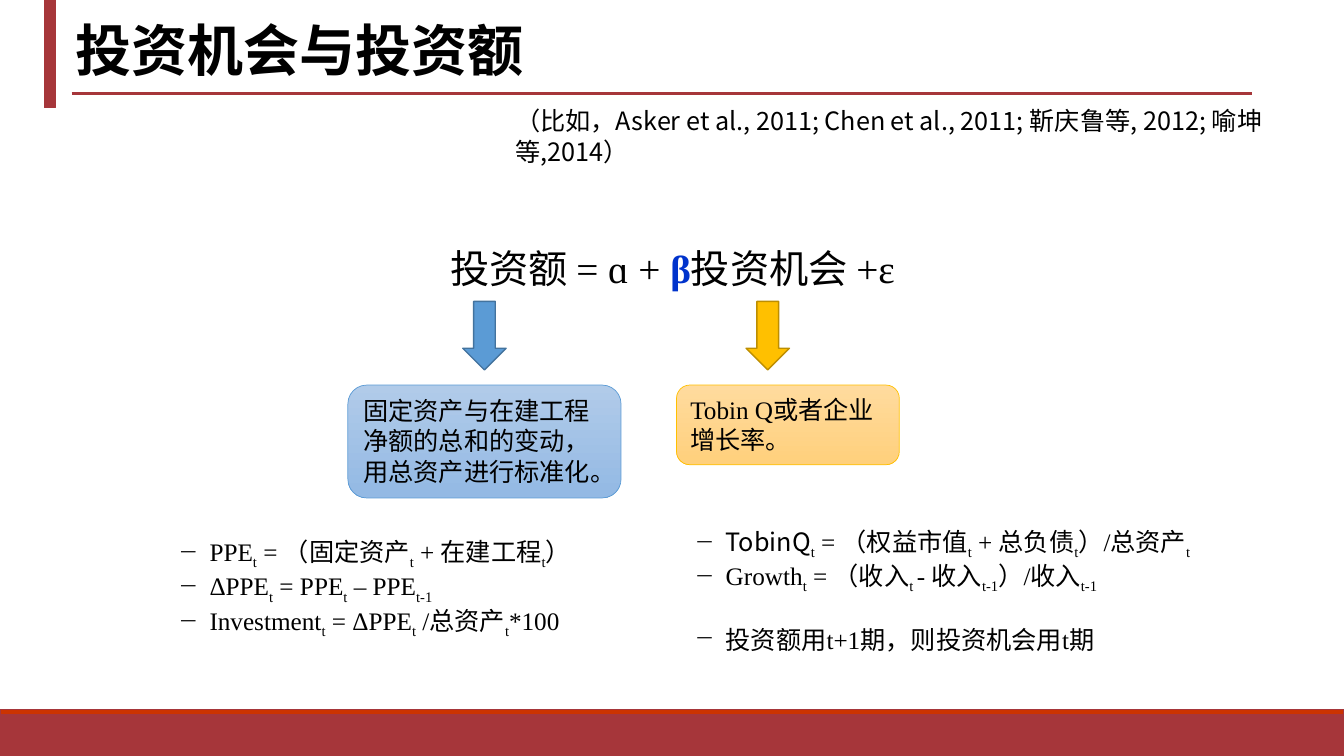
import pptx
import pptx.dml.color
import pptx.enum.shapes
import pptx.enum.text
import pptx.oxml.ns
import pptx.util
from lxml import etree

Inches = pptx.util.Inches
Pt = pptx.util.Pt
Shape = pptx.enum.shapes.MSO_SHAPE
Fit = pptx.enum.text.MSO_AUTO_SIZE
Anchor = pptx.enum.text.MSO_ANCHOR
Align = pptx.enum.text.PP_ALIGN
qn = pptx.oxml.ns.qn

SANS, SERIF = "Noto Sans CJK SC", "Times New Roman"
RED, BLACK, BLUE = "A6363A", "000000", "0033CC"


def color(code):
    return pptx.dml.color.RGBColor.from_string(code)


class Deck:
    def __init__(self):
        self.file = pptx.Presentation()
        self.file.slide_width = Inches(13.33)
        self.file.slide_height = Inches(7.5)
        self.slide = self.file.slides.add_slide(self.file.slide_layouts[5])

    def run(self, par, text, face, size=18, ink=BLACK, bold=False):
        """Add text to a paragraph; parts between bars are subscripts."""
        for i, part in enumerate(text.split("|")):
            if not part:
                continue
            run = par.add_run()
            run.text = part
            font = run.font
            font.name, font.size, font.bold = face, Pt(size), bold
            font.color.rgb = color(ink)
            props = run._r.get_or_add_rPr()
            etree.SubElement(props, qn("a:ea")).set("typeface", SANS)
            if i % 2:
                props.set("baseline", "-25000")

    def title(self, text, *box):
        head = self.slide.shapes.title
        head.left, head.top, head.width, head.height = map(Inches, box)
        frame = head.text_frame
        frame.auto_size = Fit.NONE
        frame.vertical_anchor = Anchor.MIDDLE
        par = frame.paragraphs[0]
        par.alignment = Align.LEFT
        par.line_spacing = 0.9
        self.run(par, text, SANS, 40, bold=True)

    def shape(self, kind, box, fill, line, width=1):
        """Add a preset shape; a pair of fills makes a downward gradient."""
        item = self.slide.shapes.add_shape(kind, *map(Inches, box))
        item.shadow.inherit = False
        if isinstance(fill, tuple):
            item.fill.gradient()
            item.fill.gradient_angle = 270
            for stop, code in zip(item.fill.gradient_stops, fill):
                stop.color.rgb = color(code)
        else:
            item.fill.solid()
            item.fill.fore_color.rgb = color(fill)
        item.line.color.rgb = color(line)
        item.line.width = Pt(width)
        return item

    def rule(self, left, right, y):
        line = self.slide.shapes.add_connector(
            pptx.enum.shapes.MSO_CONNECTOR.STRAIGHT,
            Inches(left), Inches(y), Inches(right), Inches(y))
        line.line.color.rgb = color(RED)
        line.line.width = Pt(2.25)
        etree.SubElement(line._element.spPr, qn("a:effectLst"))

    def frame(self, item):
        frame = item.text_frame
        frame.word_wrap = True
        frame.auto_size = Fit.SHAPE_TO_FIT_TEXT
        frame.vertical_anchor = Anchor.TOP
        return frame

    def text(self, *box):
        return self.frame(self.slide.shapes.add_textbox(*map(Inches, box)))

    def card(self, box, fill, line, text, face):
        item = self.shape(Shape.ROUNDED_RECTANGLE, box, fill, line, 0.5)
        par = self.frame(item).paragraphs[0]
        par.alignment = Align.LEFT
        self.run(par, text, face)

    def list(self, box, rows):
        """Add dashed rows, each a space before and its (text, face) runs."""
        frame = self.text(*box)
        for i, (gap, runs) in enumerate(rows):
            par = frame.add_paragraph() if i else frame.paragraphs[0]
            par.space_before = Pt(gap)
            props = par._p.get_or_add_pPr()
            props.set("marL", str(Inches(0.31)))
            props.set("indent", str(-Inches(0.31)))
            etree.SubElement(props, qn("a:buChar")).set("char", "−")
            for text, face in runs:
                self.run(par, text, face)


def main():
    deck = Deck()
    for box, fill in (((0, 7.09, 13.33, 0.42), RED),
                      ((0, 7.04, 13.33, 0.05), "CC3300"),
                      ((0.44, 0, 0.11, 1.07), RED)):
        deck.shape(Shape.RECTANGLE, box, fill, RED)
    deck.rule(0.71, 12.42, 0.93)
    deck.title("投资机会与投资额", 0.65, -0.02, 10.64, 1.09)

    model = deck.text(0.85, 2.14, 11.64, 0.73).paragraphs[0]
    model.alignment = Align.CENTER
    model.line_spacing = 1.5
    model.space_before = Pt(12)
    deck.run(model, "投资额 = ɑ + ", SERIF, 28)
    deck.run(model, "β", SERIF, 28, BLUE, True)
    deck.run(model, "投资机会 +ε", SERIF, 28)

    cite = deck.text(5.01, 1, 8.19, 0.4).paragraphs[0]
    deck.run(cite, "（比如，Asker et al., 2011; Chen et al., 2011; "
                   "靳庆鲁等, 2012; 喻坤等,2014）", SANS)

    for left, fill, line in ((4.59, "5B9BD5", "43739E"),
                             (7.4, "FFC000", "BD8E00")):
        deck.shape(Shape.DOWN_ARROW, (left, 2.99, 0.43, 0.68), fill, line)
    deck.card((3.45, 3.82, 2.71, 1.12), ("B1CBE9", "93B9E4"), "5B9BD5",
              "固定资产与在建工程净额的总和的变动，用总资产进行标准化。", SANS)
    deck.card((6.71, 3.82, 2.21, 0.79), ("FFDB9E", "FFD07C"), "FFC000",
              "Tobin Q或者企业增长率。", SERIF)

    deck.list((1.67, 5.27, 4.64, 1.01), (
        (0, [("PPE|t| = （固定资产|t| + 在建工程|t|）", SERIF)]),
        (0, [("ΔPPE|t| = PPE|t| – PPE|t-1|", SERIF)]),
        (0, [("Investment|t| = ΔPPE|t| /总资产|t|*100", SERIF)])))
    deck.list((6.79, 5.17, 5.3, 1.31), (
        (0, [("TobinQ", SANS),
             ("|t| = （权益市值|t| + 总负债|t|）/总资产|t|", SERIF)]),
        (0, [("Growth|t| = （收入|t |- 收入|t-1|）/收入|t-1|", SERIF)]),
        (21, [("投资额用t+1期，则投资机会用t期", SERIF)])))
    deck.file.save("out.pptx")


if __name__ == "__main__":
    main()
